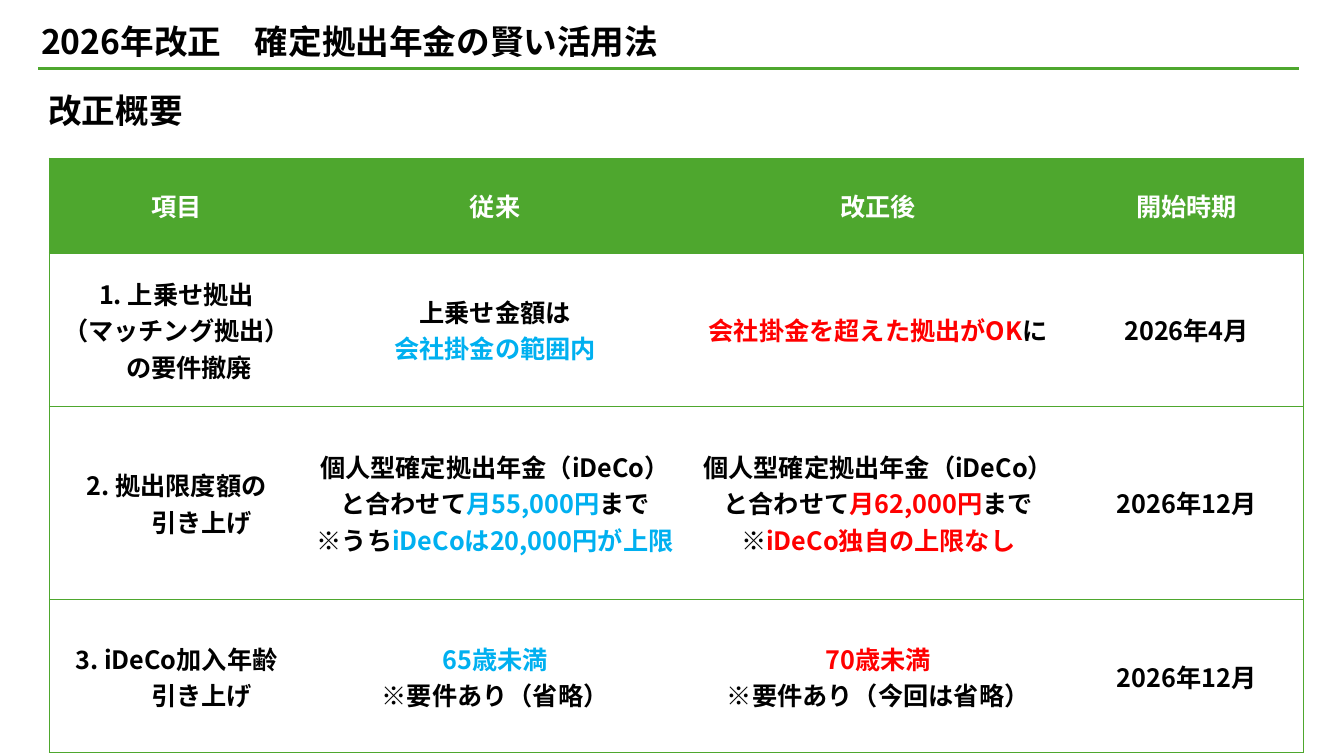
from dataclasses import dataclass

from lxml import etree
from pptx import Presentation
from pptx.dml.color import RGBColor
from pptx.enum.shapes import MSO_CONNECTOR
from pptx.enum.text import MSO_ANCHOR, PP_ALIGN
from pptx.oxml.ns import qn
from pptx.util import Inches, Pt

STRAIGHT = MSO_CONNECTOR.STRAIGHT
MIDDLE = MSO_ANCHOR.MIDDLE
LEFT, CENTER = PP_ALIGN.LEFT, PP_ALIGN.CENTER


@dataclass(frozen=True)
class Theme:
    """Colours, font and sizes of the slide."""
    font: str = "Noto Sans CJK JP"
    green: str = "4EA72E"
    text: str = "000000"
    white: str = "FFFFFF"
    before: str = "00B0F0"
    after: str = "FF0000"
    heading_size: int = 24
    table_size: int = 18
    rule_width: float = 1.5
    border_width: float = 1


THEME = Theme()
OLD, NEW = THEME.before, THEME.after
COLUMN_WIDTHS = [2.52, 3.8, 3.8, 2.32]
ROW_HEIGHTS = [0.94, 1.52, 1.92, 1.52]
IDEOGRAPH = 0.25
HEADERS = ["項目", "従来", "改正後", "開始時期"]
REFORMS = [
    [
        [["1. 上乗せ拠出"], ["（マッチング拠出）"], [IDEOGRAPH, "の要件撤廃"]],
        [["上乗せ金額は"], [("会社掛金の範囲内", OLD)]],
        [[("会社掛金を超えた拠出がOK", NEW), "に"]],
        [["2026年4月"]],
    ],
    [
        [["2. 拠出限度額の"], [2 * IDEOGRAPH, "引き上げ"]],
        [["個人型確定拠出年金（iDeCo）"],
         ["と合わせて", ("月55,000円", OLD), "まで"],
         ["※うち", ("iDeCoは20,000円が上限", OLD)]],
        [["個人型確定拠出年金（iDeCo）と合わせて", ("月62,000円", NEW), "まで"],
         ["※", ("iDeCo独自の上限なし", NEW)]],
        [["2026年12月"]],
    ],
    [
        [["3. iDeCo加入年齢"], [2 * IDEOGRAPH, "引き上げ"]],
        [[("65歳未満", OLD)], ["※要件あり（省略）"]],
        [[("70歳未満", NEW)], ["※要件あり（今回は省略）"]],
        [["2026年12月"]],
    ],
]


def add_run(paragraph, text, size, color):
    """Add one bold run in the slide font."""
    run = paragraph.add_run()
    run.text = text
    font = run.font
    font.size, font.bold, font.name = Pt(size), True, THEME.font
    font.color.rgb = RGBColor.from_string(color)
    etree.SubElement(font._element, qn("a:ea"), typeface=THEME.font)


def write_lines(frame, lines, size, color, align):
    """Write lines of runs, where a leading number is an indent in inches."""
    for index, line in enumerate(lines):
        paragraph = frame.paragraphs[0] if index == 0 else frame.add_paragraph()
        paragraph.alignment = align
        for part in line:
            if isinstance(part, float):
                properties = paragraph._p.get_or_add_pPr()
                properties.set("marL", str(Inches(part)))
                properties.set("indent", "0")
            else:
                text, run_color = (part, color) if isinstance(part, str) else part
                add_run(paragraph, text, size, run_color)


def add_heading(slide, text, left, top, width, height):
    """Place a heading line in the given box."""
    shape = slide.shapes.add_textbox(
        Inches(left), Inches(top), Inches(width), Inches(height))
    frame = shape.text_frame
    frame.word_wrap = True
    frame.vertical_anchor = MIDDLE
    write_lines(frame, [[text]], THEME.heading_size, THEME.text, LEFT)
    frame.paragraphs[0].line_spacing = 0.9


def add_rule(slide, left, top, width):
    """Draw the green rule below the title."""
    rule = slide.shapes.add_connector(
        STRAIGHT, Inches(left), Inches(top), Inches(left + width), Inches(top))
    rule.line.color.rgb = RGBColor.from_string(THEME.green)
    rule.line.width = Pt(THEME.rule_width)
    etree.SubElement(rule._element.spPr, qn("a:effectLst"))


def set_borders(cell, visible):
    """Draw the visible sides of a cell in green and clear the others."""
    properties = cell._tc.get_or_add_tcPr()
    for side in "LRTB":
        line = etree.SubElement(properties, qn(f"a:ln{side}"),
                                w=str(Pt(THEME.border_width)))
        if side in visible:
            fill = etree.SubElement(line, qn("a:solidFill"))
            etree.SubElement(fill, qn("a:srgbClr"), val=THEME.green)
        else:
            etree.SubElement(line, qn("a:noFill"))


def add_reform_table(slide, left, top):
    """Place the table of reforms with its corner at the given point."""
    rows = [[[[header]] for header in HEADERS]] + REFORMS
    table = slide.shapes.add_table(
        len(rows), len(HEADERS), Inches(left), Inches(top),
        Inches(sum(COLUMN_WIDTHS)), Inches(sum(ROW_HEIGHTS))).table
    table.horz_banding = False
    for column, width in zip(table.columns, COLUMN_WIDTHS):
        column.width = Inches(width)
    for row, height in zip(table.rows, ROW_HEIGHTS):
        row.height = Inches(height)
    for row_index, row in enumerate(rows):
        is_header = row_index == 0
        fill_color = THEME.green if is_header else THEME.white
        text_color = THEME.white if is_header else THEME.text
        for column_index, lines in enumerate(row):
            cell = table.cell(row_index, column_index)
            outer = {0: "L", len(HEADERS) - 1: "R"}.get(column_index, "")
            set_borders(cell, "TB" + outer)
            cell.fill.solid()
            cell.fill.fore_color.rgb = RGBColor.from_string(fill_color)
            cell.vertical_anchor = MIDDLE
            write_lines(cell.text_frame, lines, THEME.table_size, text_color, CENTER)


def build_reform_slide(presentation):
    """Build the slide on the pension reform."""
    slide = presentation.slides.add_slide(presentation.slide_layouts[6])
    add_heading(slide, "2026年改正　確定拠出年金の賢い活用法", 0.31, 0.18, 11.5, 0.5)
    add_rule(slide, 0.38, 0.68, 12.5)
    add_heading(slide, "改正概要", 0.38, 0.87, 12.67, 0.5)
    add_reform_table(slide, 0.49, 1.57)


def main():
    """Create and save the presentation."""
    presentation = Presentation()
    presentation.slide_width = Inches(13.33)
    presentation.slide_height = Inches(7.5)
    build_reform_slide(presentation)
    presentation.save("out.pptx")


if __name__ == "__main__":
    main()
